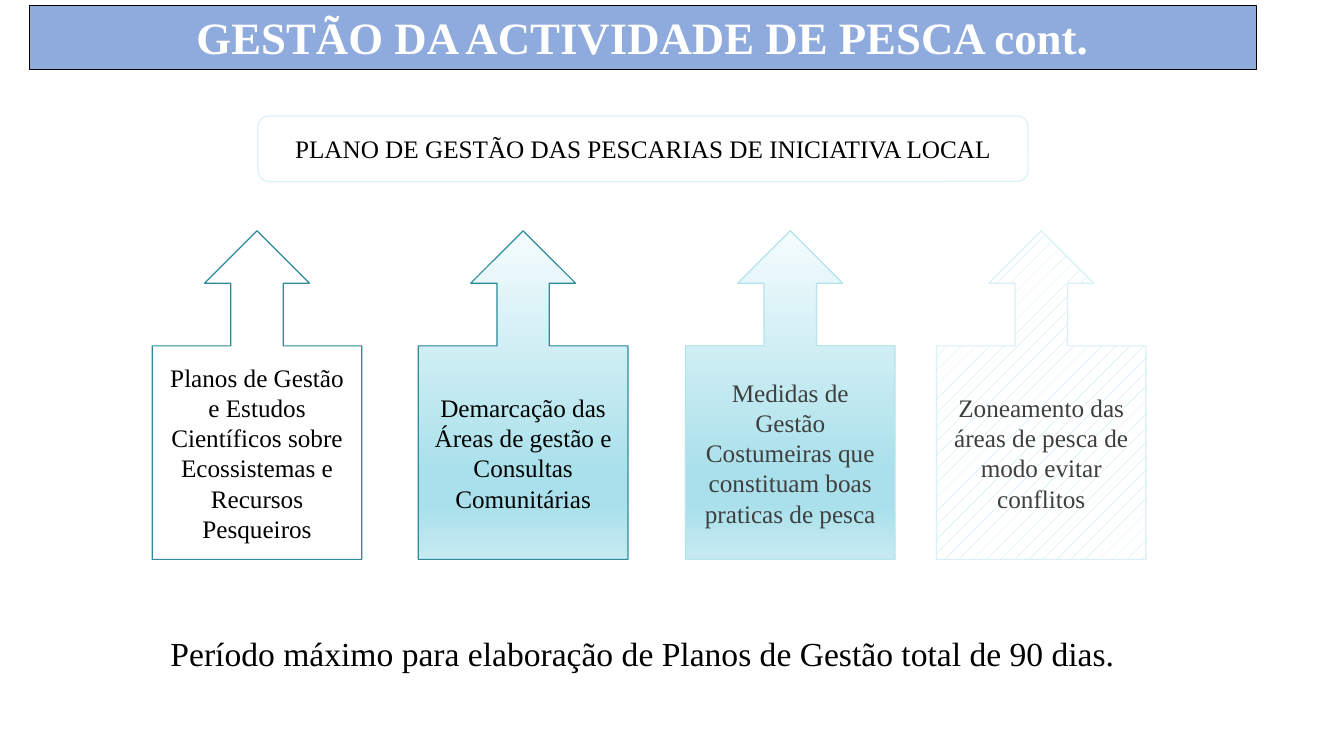
import pptx
import pptx.util
import pptx.dml.color
import pptx.enum.dml
import pptx.enum.shapes
import pptx.enum.text
import pptx.oxml

Pt = pptx.util.Pt
PRESET = pptx.enum.shapes.MSO_SHAPE
ANCHOR = pptx.enum.text.MSO_ANCHOR
GROW = pptx.enum.text.MSO_AUTO_SIZE.SHAPE_TO_FIT_TEXT
FIXED = pptx.enum.text.MSO_AUTO_SIZE.NONE


def color(hex_text):
    return pptx.dml.color.RGBColor.from_string(hex_text)


def write(shape, text, ink, anchor, auto_size, **font_format):
    frame = shape.text_frame
    for key, value in {"word_wrap": True, "vertical_anchor": anchor, "auto_size": auto_size}.items():
        setattr(frame, key, value)
    paragraph = frame.paragraphs[0]
    paragraph.alignment = pptx.enum.text.PP_ALIGN.CENTER
    run = paragraph.add_run()
    run.text = text
    for key, value in {"name": "Times New Roman", "size": Pt(18), **font_format}.items():
        setattr(run.font, key, value)
    run.font.color.rgb = color(ink)
    return paragraph


deck = pptx.Presentation()
deck.slide_width, deck.slide_height = Pt(960), Pt(540)
slide = deck.slides.add_slide(deck.slide_layouts[6])

# Arrows: left edge, fill, outline, ink, text
arrows = [
    (108.72, None, "2F8A9B", "000000",
     "Planos de Gestão e Estudos Científicos sobre Ecossistemas e Recursos Pesqueiros"),
    (298.8, "gradient", "2F8A9B", "000000",
     "Demarcação das Áreas de gestão e Consultas Comunitárias"),
    (489.6, "gradient", "B3E3ED", "3F3F3F",
     "Medidas de Gestão Costumeiras que constituam boas praticas de pesca"),
    (668.88, "pattern", "D9F1F6", "3F3F3F",
     "Zoneamento das áreas de pesca de modo evitar conflitos"),
]
gradient_stops = [(0, "F5FCFD"), (74, "A9E0EB"), (83, "A9E0EB"), (100, "C6EAF1")]
stops_xml = "".join(
    f'<a:gs pos="{percent * 1000}"><a:srgbClr val="{tint}"/></a:gs>'
    for percent, tint in gradient_stops)
gradient_xml = (
    '<a:gradFill xmlns:a="http://schemas.openxmlformats.org/drawingml/2006/main" rotWithShape="1">'
    f'<a:gsLst>{stops_xml}</a:gsLst><a:lin ang="5400000" scaled="0"/></a:gradFill>')

for left, filling, outline, ink, text in arrows:
    arrow = slide.shapes.add_shape(
        PRESET.UP_ARROW_CALLOUT, Pt(left), Pt(164.88), Pt(149.76), Pt(234.72))
    arrow.shadow.inherit = False
    arrow.line.color.rgb = color(outline)
    arrow.line.width = Pt(0.85)
    if filling == "gradient":
        arrow.element.spPr.find(pptx.oxml.ns.qn("a:prstGeom")).addnext(
            pptx.oxml.parse_xml(gradient_xml))
    elif filling == "pattern":
        arrow.fill.patterned()
        arrow.fill.pattern = pptx.enum.dml.MSO_PATTERN.PERCENT_5
        arrow.fill.fore_color.rgb = color("B3E3ED")
        arrow.fill.back_color.rgb = color("FFFFFF")
    else:
        arrow.fill.background()
    write(arrow, text, ink, ANCHOR.MIDDLE, FIXED)

# Deadline
deadline = slide.shapes.add_textbox(Pt(7.2), Pt(419.76), Pt(903.6), Pt(56.16))
deadline_line = write(
    deadline, "Período máximo para elaboração de Planos de Gestão total de 90 dias.",
    "000000", ANCHOR.TOP, GROW, size=Pt(24))
deadline_line.line_spacing = 2.0

# Title bar and plan box
bars = [
    (PRESET.RECTANGLE, (20.88, 3.6, 876.24, 46.08), "8FAADC", "000000", 0.5,
     "GESTÃO DA ACTIVIDADE DE PESCA cont.", "FFFFFF", ANCHOR.TOP, GROW,
     {"size": Pt(32), "bold": True}),
    (PRESET.ROUNDED_RECTANGLE, (184.32, 82.8, 550.08, 46.8), "FFFFFF", "D9F1F6", 0.85,
     "PLANO DE GESTÃO DAS PESCARIAS DE INICIATIVA LOCAL", "000000", ANCHOR.MIDDLE, FIXED, {}),
]
for preset, box, filling, outline, weight, text, ink, anchor, auto_size, font_format in bars:
    bar = slide.shapes.add_shape(preset, *map(Pt, box))
    bar.shadow.inherit = False
    bar.fill.solid()
    bar.fill.fore_color.rgb = color(filling)
    bar.line.color.rgb = color(outline)
    bar.line.width = Pt(weight)
    write(bar, text, ink, anchor, auto_size, **font_format)

deck.save("out.pptx")
